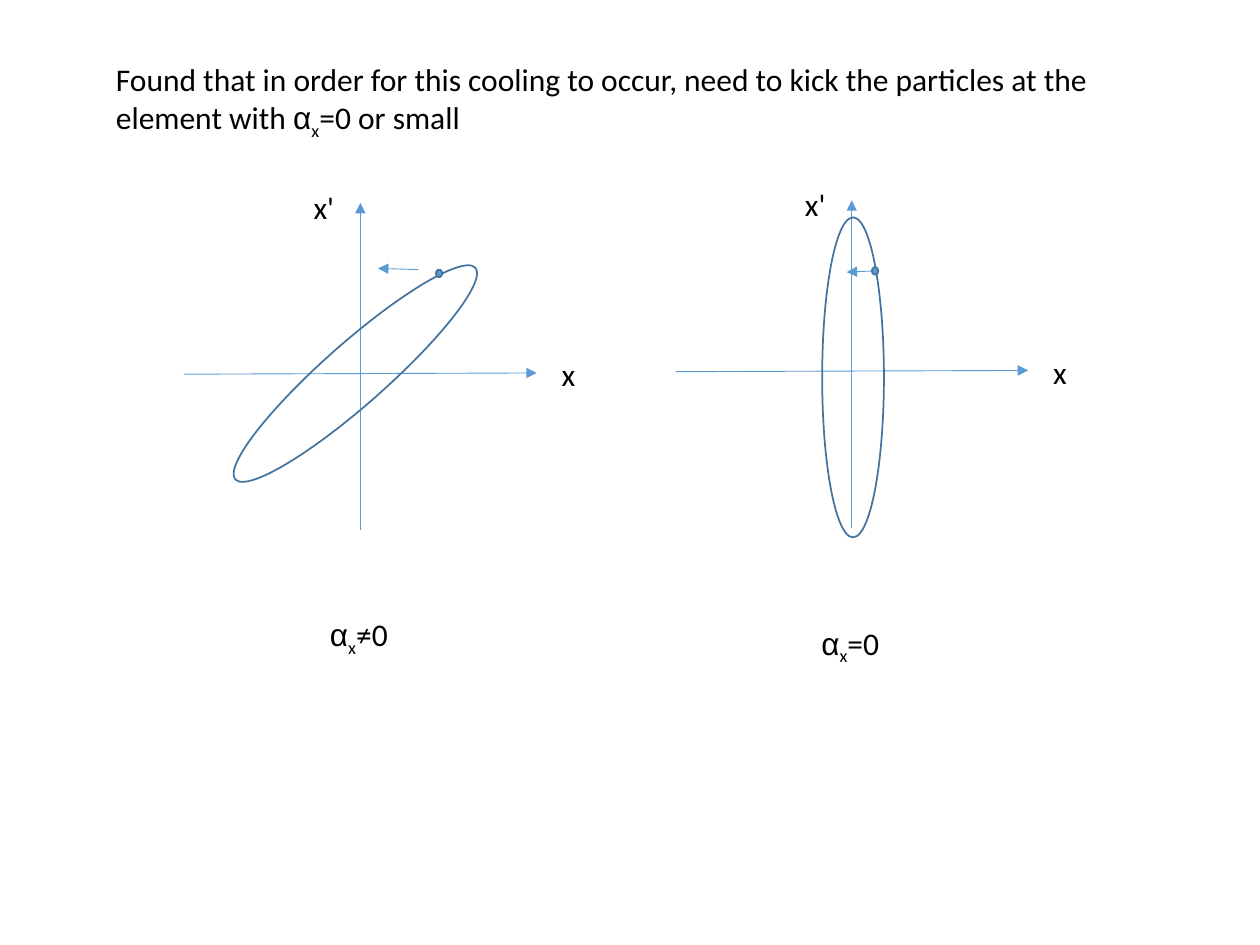
from lxml.etree import SubElement
from pptx import Presentation
from pptx.dml.color import RGBColor
from pptx.enum.shapes import MSO_CONNECTOR, MSO_SHAPE
from pptx.enum.text import MSO_ANCHOR, MSO_AUTO_SIZE, PP_ALIGN
from pptx.oxml.ns import qn
from pptx.util import Inches, Pt

BLUE, DARK_BLUE, BLACK = "5B9BD5", "43739E", "000000"

prs = Presentation()
prs.slide_width, prs.slide_height = Inches(10), Inches(7.5)
s = prs.slides.add_slide(prs.slide_layouts[5])
unit = prs.slide_width / 10  # grid of 10 columns by 7.5 rows


def grid(*cells):
    return [round(cell * unit) for cell in cells]


def write(sp, text, wrap=False):
    """Fill a shape with 18 pt text; "αx" gets an Arial alpha and a subscript x."""
    tf = sp.text_frame
    tf.word_wrap = wrap
    tf.auto_size = MSO_AUTO_SIZE.SHAPE_TO_FIT_TEXT
    tf.vertical_anchor = MSO_ANCHOR.TOP
    p = tf.paragraphs[0]
    p.alignment = PP_ALIGN.LEFT
    before, alpha, after = text.partition("αx")
    for part in filter(None, [before, *alpha, after]):
        r = p.add_run()
        r.text = part
        r.font.size = Pt(18)
        r.font.name = "Arial" if part == "α" else "Calibri"
        r.font.color.rgb = RGBColor.from_string(BLACK)
        if alpha and part == "x":
            r.font._element.set("baseline", "-25000")


title = s.shapes.title
title.left, title.top, title.width, title.height = grid(0.82, 0.43, 8.1, 0.71)
write(title, "Found that in order for this cooling to occur, need to kick "
             "the particles at the element with αx=0 or small", wrap=True)

# origin, ellipse centre, rotation, particle, kick, caption, caption position
plots = [
    ((2.86, 2.97), (2.82, 2.965), 318.6, (3.485, 2.17),
     (3.32, 2.14, 3, 2.13), "αx≠0", (2.52, 4.83)),
    ((6.76, 2.95), (6.77, 2.995), 270, (6.945, 2.15),
     (6.94, 2.15, 6.72, 2.16), "αx=0", (6.42, 4.9)),
]
for (x, y), centre, rotation, particle, kick, caption, caption_at in plots:
    # Axes and kick
    for ends in [(x - 1.4, y, x + 1.4, y - 0.01), (x, y + 1.24, x, y - 1.36), kick]:
        c = s.shapes.add_connector(MSO_CONNECTOR.STRAIGHT, *grid(*ends))
        c.line.width = Pt(0.5)
        c.line.color.rgb = RGBColor.from_string(BLUE)
        spPr = c.element.spPr
        SubElement(spPr.find(qn("a:ln")), qn("a:tailEnd"), type="triangle")
        SubElement(spPr, qn("a:effectLst"))

    # Phase-space ellipse and particle
    for (cx, cy), w, h, angle, fill in [(centre, 2.54, 0.49, rotation, None),
                                        (particle, 0.05, 0.06, 0, BLUE)]:
        sp = s.shapes.add_shape(MSO_SHAPE.OVAL, *grid(cx - w / 2, cy - h / 2, w, h))
        sp.rotation = angle
        sp.shadow.inherit = False
        sp.line.width = Pt(1)
        sp.line.color.rgb = RGBColor.from_string(DARK_BLUE)
        if fill:
            sp.fill.solid()
            sp.fill.fore_color.rgb = RGBColor.from_string(fill)
        else:
            sp.fill.background()

    # Axis labels and caption
    for text, at, w in [("x", (x + 1.5, y - 0.2), 0.31),
                        ("x'", (x - 0.47, y - 1.53), 0.37),
                        (caption, caption_at, 0.69)]:
        write(s.shapes.add_textbox(*grid(*at, w, 0.4)), text)

prs.save("out.pptx")
